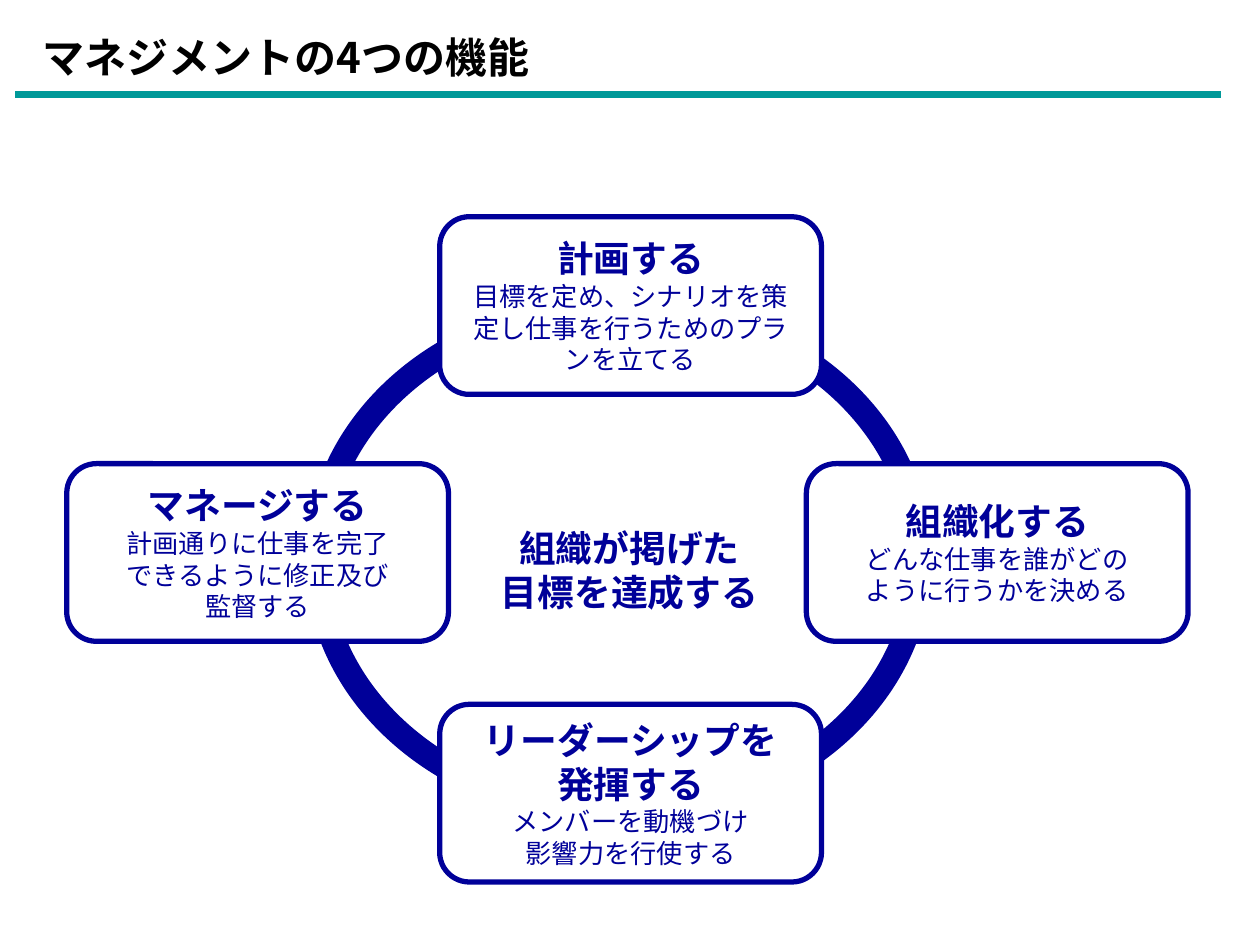
from lxml import etree
from pptx import Presentation
from pptx.dml.color import RGBColor
from pptx.enum import shapes, text
from pptx.oxml import ns
from pptx.util import Inches, Pt

FONT = "Noto Sans CJK JP"
BLACK = RGBColor(0x00, 0x00, 0x00)
WHITE = RGBColor(0xFF, 0xFF, 0xFF)
NAVY = RGBColor(0x00, 0x00, 0x99)
TEAL = RGBColor(0x00, 0x99, 0x99)

HEADING = {"size": Pt(21), "bold": True}
DETAIL = {"size": Pt(15), "bold": False}
CARD_WIDTH, CARD_HEIGHT = 3.03, 1.41
CARDS = [
    (3.49, 1.72, ["計画する"], ["目標を定め、シナリオを策定し仕事を行うためのプランを立てる"]),
    (6.4, 3.68, ["組織化する"], ["どんな仕事を誰がどの", "ように行うかを決める"]),
    (0.53, 3.68, ["マネージする"], ["計画通りに仕事を完了", "できるように修正及び", "監督する"]),
    (3.49, 5.59, ["リーダーシップを", "発揮する"], ["メンバーを動機づけ", "影響力を行使する"]),
]


def write_lines(frame, lines, color, align, anchor):
    """Fill a text frame with one paragraph for each (wording, format) pair."""
    settings = {"word_wrap": True, "vertical_anchor": anchor,
                "margin_left": Inches(0.1), "margin_right": Inches(0.1),
                "margin_top": Inches(0.05), "margin_bottom": Inches(0.05)}
    for name, value in settings.items():
        setattr(frame, name, value)
    for index, (wording, style) in enumerate(lines):
        para = frame.paragraphs[0] if index == 0 else frame.add_paragraph()
        para.alignment = align
        span = para.add_run()
        span.text = wording
        for name, value in {"name": FONT, **style}.items():
            setattr(span.font, name, value)
        span.font.color.rgb = color
        etree.SubElement(span._r.get_or_add_rPr(), ns.qn("a:ea"), typeface=FONT)


def place_header(page, left, top, width, height):
    """Place the title and the rule beneath it."""
    title = page.shapes.title
    box = {"left": left, "top": top, "width": width, "height": height}
    for name, value in box.items():
        setattr(title, name, Inches(value))
    write_lines(title.text_frame, [("マネジメントの4つの機能", {"size": Pt(24), "bold": True})],
                BLACK, text.PP_ALIGN.LEFT, text.MSO_ANCHOR.TOP)
    rule = page.shapes.add_connector(shapes.MSO_CONNECTOR.STRAIGHT, Inches(0.12),
                                     Inches(0.75), Inches(9.69), Inches(0.75))
    rule.line.color.rgb = TEAL
    rule.line.width = Pt(4.5)
    etree.SubElement(rule._element.spPr, ns.qn("a:effectLst"))


def add_outline(page, kind, box, line_width):
    """Add a navy-outlined preset shape without a shadow."""
    shape = page.shapes.add_shape(kind, *map(Inches, box))
    shape.shadow.inherit = False
    shape.line.color.rgb = NAVY
    shape.line.width = Pt(line_width)
    return shape


def place_card(page, left, top, headings, details):
    """Place one rounded card with its heading and explanation."""
    card = add_outline(page, shapes.MSO_SHAPE.ROUNDED_RECTANGLE,
                       (left, top, CARD_WIDTH, CARD_HEIGHT), 3)
    card.fill.solid()
    card.fill.fore_color.rgb = WHITE
    lines = [(line, HEADING) for line in headings] + [(line, DETAIL) for line in details]
    write_lines(card.text_frame, lines, NAVY, text.PP_ALIGN.CENTER, text.MSO_ANCHOR.MIDDLE)


def place_cycle(page, left, top, width, height):
    """Place the ring, the four cards on it and the goal in its centre."""
    ring = add_outline(page, shapes.MSO_SHAPE.OVAL, (left, top, width, height), 14.25)
    ring.fill.background()
    for card in CARDS:
        place_card(page, *card)
    goal = page.shapes.add_textbox(Inches(3.54), Inches(4.12), Inches(2.91), Inches(0.81))
    lines = [(line, HEADING) for line in ("組織が掲げた", "目標を達成する")]
    write_lines(goal.text_frame, lines, NAVY, text.PP_ALIGN.CENTER, text.MSO_ANCHOR.TOP)


def main():
    """Build the slide and save it."""
    deck = Presentation()
    deck.slide_width, deck.slide_height = Inches(10), Inches(7.5)
    page = deck.slides.add_slide(deck.slide_layouts.get_by_name("Title Only"))
    place_header(page, 0.24, 0.2, 7.94, 0.5)
    place_cycle(page, 2.52, 2.43, 4.78, 4.02)
    deck.save("out.pptx")


if __name__ == "__main__":
    main()
